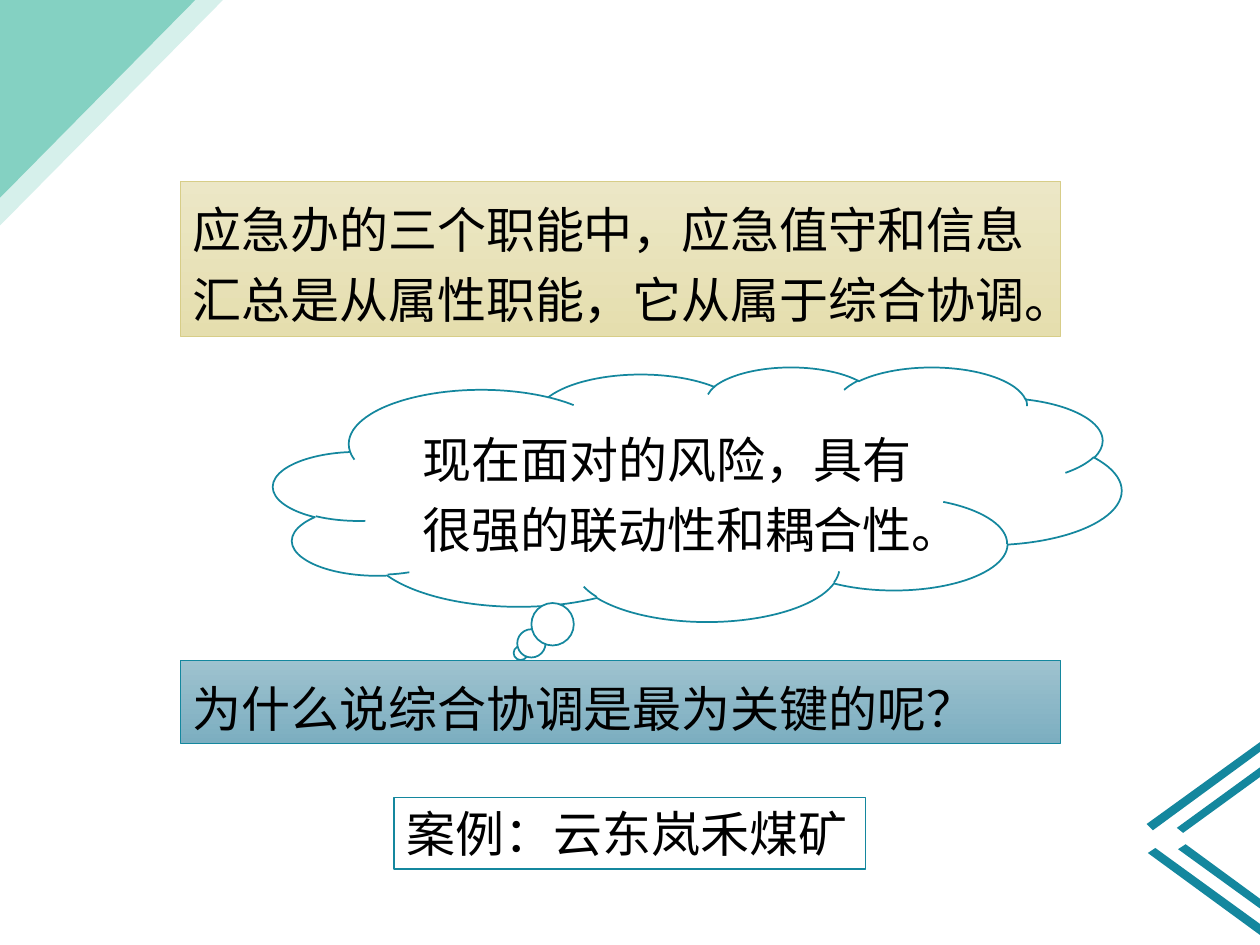
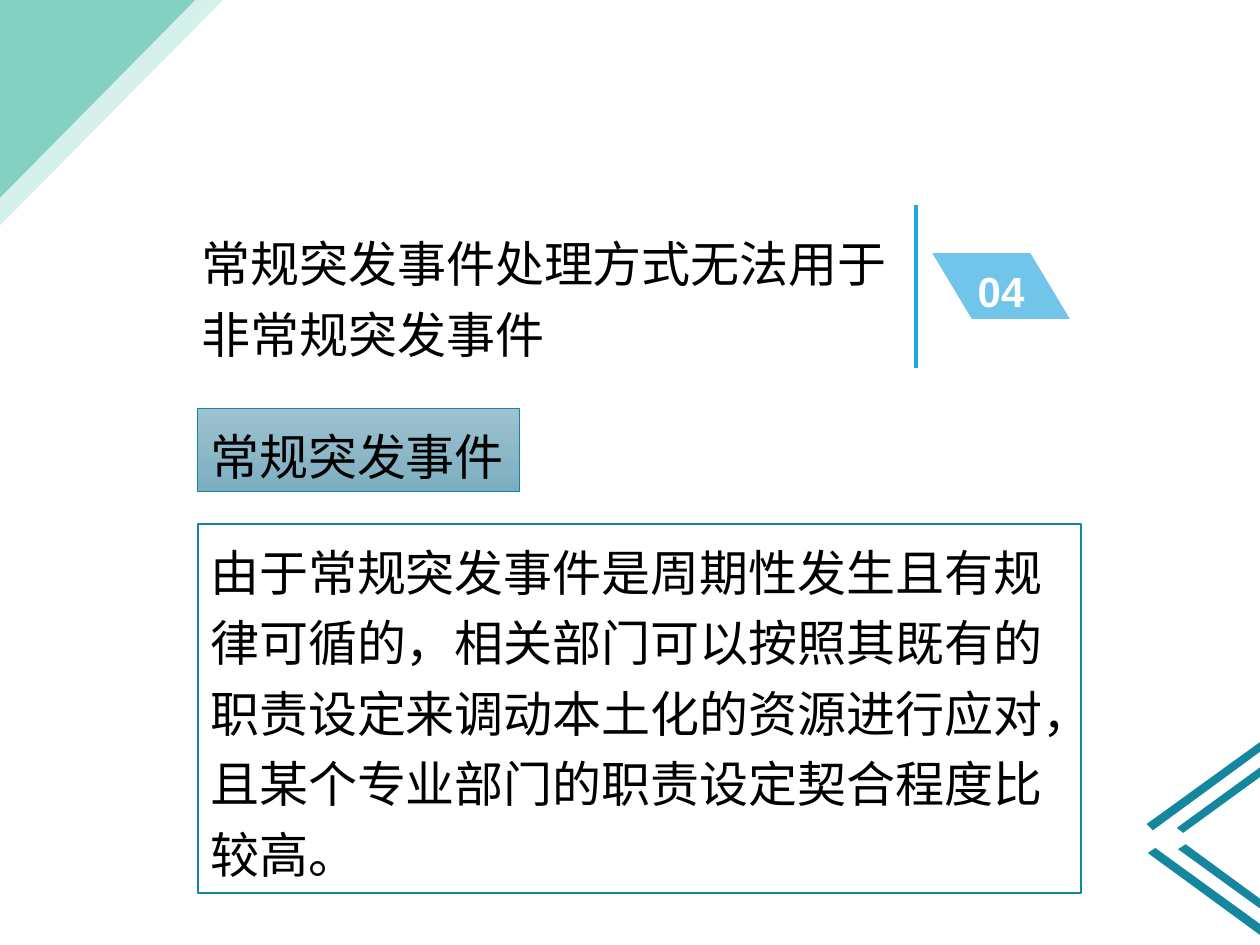
from pptx import Presentation
from pptx.dml.color import RGBColor
from pptx.enum import shapes as kinds, text as txt
from pptx.oxml import ns, xmlchemy as xml
from pptx.util import Inches, Pt

TEAL, MINT, PALE = "14879E", "84D1C2", "D6F0EB"
SKY, BLUE = "72C5EA", "26A6DF"
WHITE, BLACK = "FFFFFF", "000000"
SAND, STEEL = ("ECE7C6", "E5DEAE"), ("9EC2CF", "7CAEC0")
KIND = kinds.MSO_SHAPE
ALIGN = txt.PP_ALIGN
CJK = "Noto Sans CJK SC"

BODY = dict(size=Pt(28), name=CJK, bold=False)
BADGE = dict(size=Pt(24), name="Arial", bold=True)
STRIPES = [
    [(9.1, 6.54), (9.15, 6.59), (10.01, 5.96), (10, 5.89)],
    [(9.11, 6.77), (10, 7.42), (10.01, 7.34), (9.17, 6.73)],
    [(10, 6.09), (9.34, 6.57), (9.39, 6.61), (10.01, 6.16)],
    [(9.41, 6.7), (9.35, 6.74), (10, 7.21), (10.01, 7.14)],
]


def rgb(code):
    """Turn a hex string into a colour."""
    return RGBColor.from_string(code)


def paint(shape, fill, line=None, width=1):
    """Set fill (plain or two-stop gradient) and outline, without shadow."""
    shape.shadow.inherit = False
    if isinstance(fill, tuple):
        shape.fill.gradient()
        shape.fill.gradient_angle = 270
        for stop, code, pos in zip(shape.fill.gradient_stops, fill, (0, 1)):
            stop.color.rgb = rgb(code)
            stop.position = pos
    else:
        shape.fill.solid()
        shape.fill.fore_color.rgb = rgb(fill)
    if line:
        shape.line.color.rgb = rgb(line)
        shape.line.width = Pt(width)
    else:
        shape.line.fill.background()


def write(shape, words, look=BODY, color=BLACK, align=ALIGN.LEFT,
          anchor=txt.MSO_ANCHOR.TOP, gap=1.2, **frame):
    """Fill a shape with one styled paragraph."""
    box = shape.text_frame
    settings = dict(word_wrap=True, vertical_anchor=anchor,
                    auto_size=txt.MSO_AUTO_SIZE.NONE)
    for key, value in {**settings, **frame}.items():
        setattr(box, key, value)
    para = box.paragraphs[0]
    para.alignment, para.line_spacing = align, gap
    para.space_before = Pt(0)
    run = para.add_run()
    run.text = words
    for key, value in look.items():
        setattr(run.font, key, value)
    run.font.color.rgb = rgb(color)
    east = xml.OxmlElement("a:ea")
    east.set("typeface", look["name"])
    run.font._element.find(ns.qn("a:latin")).addnext(east)


def add(slide, kind, place, fill, line=None, width=1, flip=None):
    """Add a painted preset shape, mirrored if asked."""
    shape = slide.shapes.add_shape(kind, *map(Inches, place))
    paint(shape, fill, line, width)
    if flip:
        shape.element.spPr.find(ns.qn("a:xfrm")).set(flip, "1")
    return shape


def panel(slide, place, words, fill=WHITE, line=TEAL, width=1, gap=1.2):
    """Add a framed rectangle with body text."""
    write(add(slide, KIND.RECTANGLE, place, fill, line, width), words, gap=gap)


def stripe(slide, points):
    """Add one slanted corner stripe."""
    first, *rest = [tuple(map(Inches, point)) for point in points]
    pen = slide.shapes.build_freeform(*first, scale=1.0)
    pen.add_line_segments(rest, close=True)
    shape = pen.convert_to_shape()
    paint(shape, TEAL)
    return shape


def rule(slide, x, top, end):
    """Add a vertical divider line."""
    line = slide.shapes.add_connector(
        kinds.MSO_CONNECTOR.STRAIGHT, *map(Inches, (x, top, x, end)))
    line.line.color.rgb = rgb(BLUE)
    line.line.width = Pt(2)
    line.element.spPr.append(xml.OxmlElement("a:effectLst"))


def decorate(deck, slide):
    """Draw the corner motifs and move them to the slide master."""
    parts = [add(slide, KIND.RIGHT_TRIANGLE, (0, 0, wide, high), fill,
                 flip="flipV")
             for wide, high, fill in [(1.77, 1.79, PALE), (1.55, 1.57, MINT)]]
    parts += [stripe(slide, points) for points in STRIPES]
    for num, part in enumerate(parts, 20):
        part.element.xpath(".//p:cNvPr")[0].set("id", str(num))
        deck.slide_master.shapes.element.append(part.element)


def duties(slide):
    """Build the slide on the duties of the emergency office."""
    panel(slide, (1.43, 1.44, 6.99, 1.23),
          "应急办的三个职能中，应急值守和信息汇总是从属性职能，它从属于综合协调。",
          SAND, "D7CD88", 0.5)
    panel(slide, (1.43, 5.24, 6.99, 0.66),
          "为什么说综合协调是最为关键的呢？", STEEL, width=0.5)
    cloud = add(slide, KIND.CLOUD_CALLOUT, (2.17, 2.91, 6.73, 2.02),
                WHITE, TEAL)
    write(cloud, "现在面对的风险，具有很强的联动性和耦合性。",
          align=ALIGN.CENTER, anchor=txt.MSO_ANCHOR.MIDDLE)
    panel(slide, (3.13, 6.33, 3.74, 0.57), "案例：云东岚禾煤矿", gap=1.0)


def events(slide):
    """Build the slide on routine events."""
    badge = add(slide, KIND.PARALLELOGRAM, (7.4, 2.01, 1.09, 0.52), SKY,
                flip="flipH")
    badge.adjustments[0] = 0.6
    edges = ("left", "top", "right", "bottom")
    write(badge, "04", BADGE, WHITE, ALIGN.CENTER, txt.MSO_ANCHOR.MIDDLE,
          **{f"margin_{edge}": 0 for edge in edges})
    title = slide.shapes.title
    spot = map(Inches, (1.5, 1.71, 5.67, 1.16))
    for key, value in zip(("left", "top", "width", "height"), spot):
        setattr(title, key, value)
    write(title, "常规突发事件处理方式无法用于非常规突发事件")
    rule(slide, 7.27, 1.63, 2.92)
    panel(slide, (1.57, 3.24, 2.55, 0.66), "常规突发事件", STEEL, width=0.5)
    panel(slide, (1.57, 4.16, 7.01, 2.93),
          "由于常规突发事件是周期性发生且有规律可循的，相关部门可以按照其既有的"
          "职责设定来调动本土化的资源进行应对，且某个专业部门的职责设定契合程度比较高。")


def main():
    """Build and save the deck."""
    deck = Presentation()
    deck.slide_width, deck.slide_height = Inches(10), Inches(7.5)
    only, blank = deck.slide_layouts[5], deck.slide_layouts[6]
    first = deck.slides.add_slide(blank)
    decorate(deck, first)
    duties(first)
    events(deck.slides.add_slide(only))
    deck.save("out.pptx")


if __name__ == "__main__":
    main()
